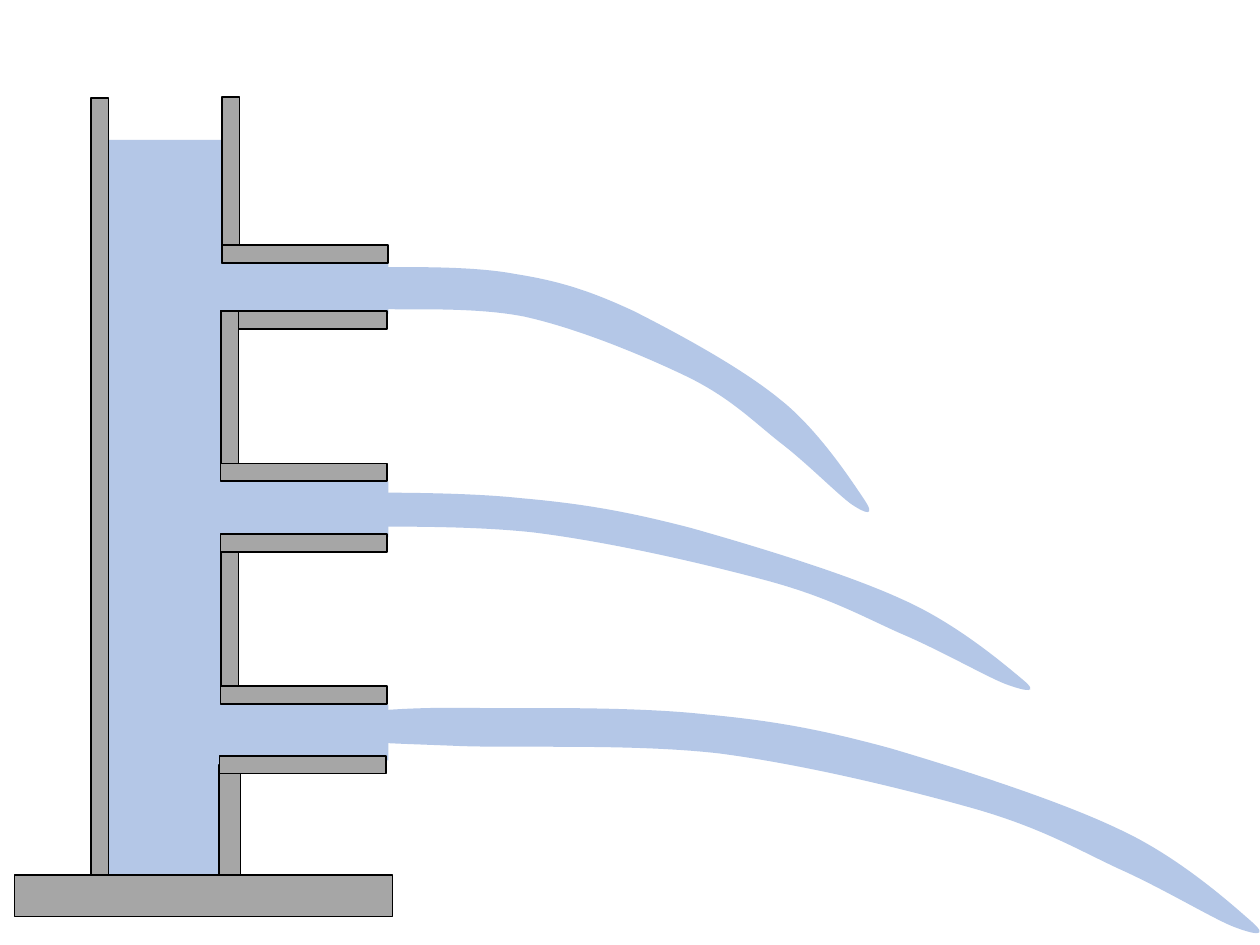
import pptx
import pptx.util
import pptx.dml.color
import pptx.enum.shapes
import pptx.oxml.ns
import lxml.etree

Cm = pptx.util.Cm
WATER, METAL, EDGE = "B4C7E7", "A6A6A6", "000000"
THICK, LONG = 0.36, 3.35

LOW_JET = (6.99, 14.25, 18.41, 4.55)
TOP_JETS = [(3.84, 9.91, 16.94, 3.99), (5.77, 5.36, 11.76, 4.95)]
PIPE, STEP, COUNT = (4.33, 5.21, 3.5, 1.12), 4.5, 3
TANK = (2.16, 2.82, 2.49, 15.09)
WALLS = [
    (1.83, 1.98, THICK, 15.7, 0),
    (4.47, 1.96, THICK, LONG, 0),
    (5.97, 3.45, THICK, LONG, 90),
    (5.94, 4.78, THICK, LONG, 90),
    (4.45, 6.27, THICK, LONG, 0),
    (5.94, 7.85, THICK, LONG, 90),
    (4.45, 10.8, THICK, LONG, 0),
    (5.94, 9.27, THICK, LONG, 90),
    (5.94, 12.34, THICK, LONG, 90),
    (4.42, 15.42, 0.43, 2.26, 0),
    (5.92, 13.74, THICK, LONG, 90),
    (3.68, 14.25, 0.84, 7.62, 90),
]

SPAN = (725, 179)
START = (15, 4)
CURVES = [
    ((33, 2), (64, 0), (109, 1)),
    ((154, 1), (232, 0), (285, 6)),
    ((339, 11), (377, 18), (432, 33)),
    ((486, 49), (565, 74), (613, 97)),
    ((661, 119), (703, 157), (718, 170)),
    ((733, 183), (721, 181), (703, 174)),
    ((686, 167), (646, 143), (612, 128)),
    ((578, 112), (551, 96), (499, 81)),
    ((446, 66), (365, 46), (296, 37)),
    ((227, 29), (135, 33), (87, 31)),
    ((39, 29), (21, 29), (7, 26)),
    ((-7, 23), (2, 16), (3, 12)),
    ((4, 9), (-3, 6), START),
]


def tint(code):
    return pptx.dml.color.RGBColor.from_string(code)


def put(shape, form):
    for name, value in form.items():
        setattr(shape, name, value)


def style(shape, fill, edge=None):
    shape.shadow.inherit = False
    for paint, code in ((shape.fill, fill), (shape.line.fill, edge)):
        if code:
            paint.solid()
            paint.fore_color.rgb = tint(code)
        else:
            paint.background()
    if edge:
        put(shape.line, {"width": pptx.util.Pt(1)})


def block(shapes, box, fill, edge=None, turn=0):
    kind = pptx.enum.shapes.MSO_SHAPE.RECTANGLE
    shape = shapes.add_shape(kind, *map(Cm, box))
    put(shape, {"rotation": turn})
    style(shape, fill, edge)


def add(path, kind, spots=()):
    qn = pptx.oxml.ns.qn
    part = lxml.etree.SubElement(path, qn("a:" + kind))
    for x, y in spots:
        lxml.etree.SubElement(part, qn("a:pt"), x=str(x), y=str(y))


def bend(shape):
    path = shape.element.spPr.find(".//" + pptx.oxml.ns.qn("a:path"))
    for part in list(path):
        path.remove(part)
    for name, size in zip("wh", SPAN):
        path.set(name, str(size))
    add(path, "moveTo", [START])
    for curve in CURVES:
        add(path, "cubicBezTo", curve)
    add(path, "close")


def jet(shapes, box):
    pen = shapes.build_freeform(*START)
    pen.add_line_segments([curve[-1] for curve in CURVES], close=True)
    shape = pen.convert_to_shape()
    put(shape, dict(zip(("left", "top", "width", "height"), map(Cm, box))))
    bend(shape)
    style(shape, WATER)


def main():
    deck = pptx.Presentation()
    deck.slide_width, deck.slide_height = Cm(25.4), Cm(19.05)
    shapes = deck.slides.add_slide(deck.slide_layouts[6]).shapes
    jet(shapes, LOW_JET)
    left, top, wide, high = PIPE
    for i in range(COUNT):
        block(shapes, (left, top + i * STEP, wide, high), WATER)
    block(shapes, TANK, WATER)
    for *box, turn in WALLS:
        block(shapes, box, METAL, EDGE, turn)
    for box in TOP_JETS:
        jet(shapes, box)
    deck.save("out.pptx")


if __name__ == "__main__":
    main()
